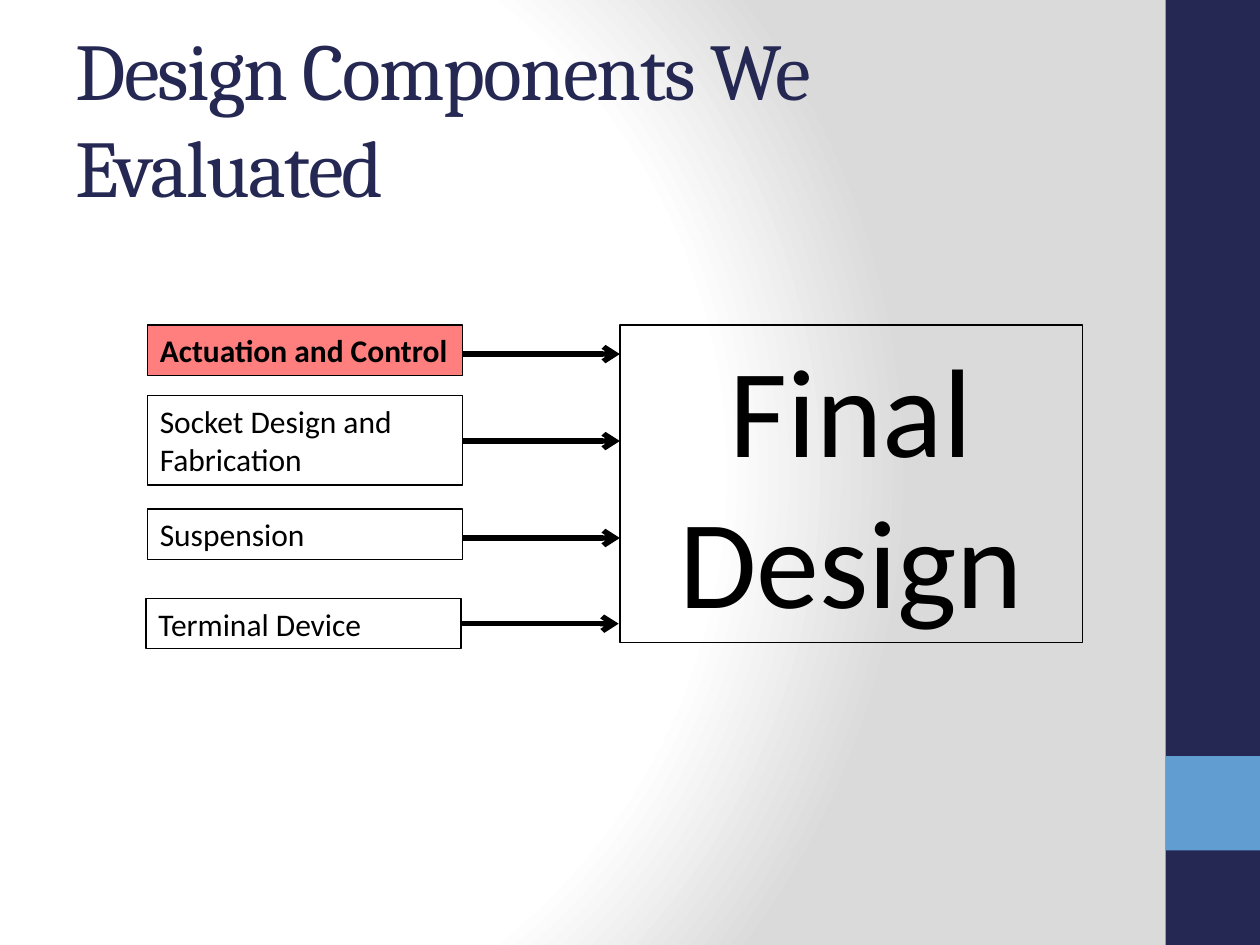
from pptx import Presentation, util as u
from pptx.dml.color import RGBColor
from pptx.enum import shapes, text
from pptx.oxml import parse_xml
from pptx.oxml.ns import nsdecls, qn

HUES = {"navy": "242852", "sky": "629DD1", "red": "FF0000",
        "ink": "000000", "white": "FFFFFF", "gray": "DADADA"}
TITLE = "Design Components We Evaluated"
GOAL = "Final Design"
PARTS = [
    {"text": "Actuation and Control", "top": 2.58, "high": 0.4, "mid": 2.81, "key": True},
    {"text": "Socket Design and Fabrication", "top": 3.14, "high": 0.71, "mid": 3.5},
    {"text": "Suspension", "top": 4.04, "high": 0.4, "mid": 4.27},
    {"text": "Terminal Device", "top": 4.75, "high": 0.4, "mid": 4.95, "shift": -0.01},
]
WIDE, HIGH = 10, 7.5
BAND = 0.75
LEFT, COL, GAP = 1.17, 2.5, 1.25
GOAL_X = LEFT + COL + GAP


def hue(name):
    return RGBColor.from_string(HUES[name])


def node(xml):
    return parse_xml(xml.replace(">", f" {nsdecls('a')}>", 1))


def style(frame, font, size, color, bold=False):
    for par in frame.paragraphs:
        for run in par.runs:
            run.font.name = font
            run.font.size = u.Pt(size)
            run.font.bold = bold
            run.font.color.rgb = hue(color)


def rect(x, y, w, h, fill=None):
    box = slide.shapes.add_shape(shapes.MSO_SHAPE.RECTANGLE,
                                 *map(u.Inches, (x, y, w, h)))
    box.shadow.inherit = False
    box.line.fill.background()
    if fill:
        box.fill.solid()
        box.fill.fore_color.rgb = hue(fill)
    else:
        box.fill.background()
    return box


def label(x, y, w, h, words, size, align, fill=None, bold=False):
    box = rect(x, y, w, h, fill)
    box.line.color.rgb = hue("ink")
    box.line.width = u.Pt(0.75)
    frame = box.text_frame
    frame.text = words
    frame.word_wrap = True
    frame.auto_size = text.MSO_AUTO_SIZE.SHAPE_TO_FIT_TEXT
    frame.vertical_anchor = text.MSO_ANCHOR.TOP
    frame.paragraphs[0].alignment = align
    style(frame, "Calibri", size, "ink", bold)
    return box


def arrow(x, y, w):
    line = slide.shapes.add_connector(shapes.MSO_CONNECTOR.STRAIGHT,
                                      *map(u.Inches, (x, y, x + w, y)))
    line.line.color.rgb = hue("ink")
    line.line.width = u.Pt(3)
    line.line._get_or_add_ln().append(node('<a:tailEnd type="arrow"></a:tailEnd>'))
    line._element.spPr.append(node("<a:effectLst></a:effectLst>"))


def backdrop():
    slide.background.fill.gradient()
    grad = slide.element.find(".//" + qn("a:gradFill"))
    stops = "".join(f'<a:gs pos="{pos}000"><a:srgbClr val="{HUES[name]}"/></a:gs>'
                    for pos, name in [(0, "white"), (75, "white"), (100, "gray")])
    new = node(f'<a:gradFill rotWithShape="1"><a:gsLst>{stops}</a:gsLst><a:path path="circle">'
               '<a:fillToRect l="20000" t="50000" r="100000" b="50000"/>'
               '</a:path></a:gradFill>')
    grad.getparent().replace(grad, new)


def heading():
    head = slide.shapes.title
    head.left, head.top, head.width, head.height = map(u.Inches, (0.5, 0.3, 8.33, 1.25))
    frame = head.text_frame
    frame.text = TITLE
    frame.word_wrap = True
    frame.auto_size = text.MSO_AUTO_SIZE.NONE
    frame.vertical_anchor = text.MSO_ANCHOR.MIDDLE
    frame.paragraphs[0].alignment = text.PP_ALIGN.LEFT
    style(frame, "Cambria", 46, "navy")
    frame.paragraphs[0].runs[0].font._element.set("spc", "-100")


deck = Presentation()
deck.slide_width, deck.slide_height = u.Inches(WIDE), u.Inches(HIGH)
slide = deck.slides.add_slide(deck.slide_layouts[5])

backdrop()
rect(WIDE - BAND, 0, BAND, HIGH, "navy")
rect(WIDE - BAND, HIGH - 2 * BAND, BAND, BAND, "sky")
heading()
label(GOAL_X, PARTS[0]["top"], 3.67, 2.52, GOAL, 72, text.PP_ALIGN.CENTER)
for part in PARTS:
    x, key = LEFT + part.get("shift", 0), part.get("key", False)
    box = label(x, part["top"], COL, part["high"], part["text"], 18,
                text.PP_ALIGN.LEFT, "red" if key else None, key)
    if key:
        tint = box._element.spPr.find(qn("a:solidFill"))[0]
        tint.append(node('<a:alpha val="50000"></a:alpha>'))
    arrow(x + COL, part["mid"], GAP)

deck.save("out.pptx")
